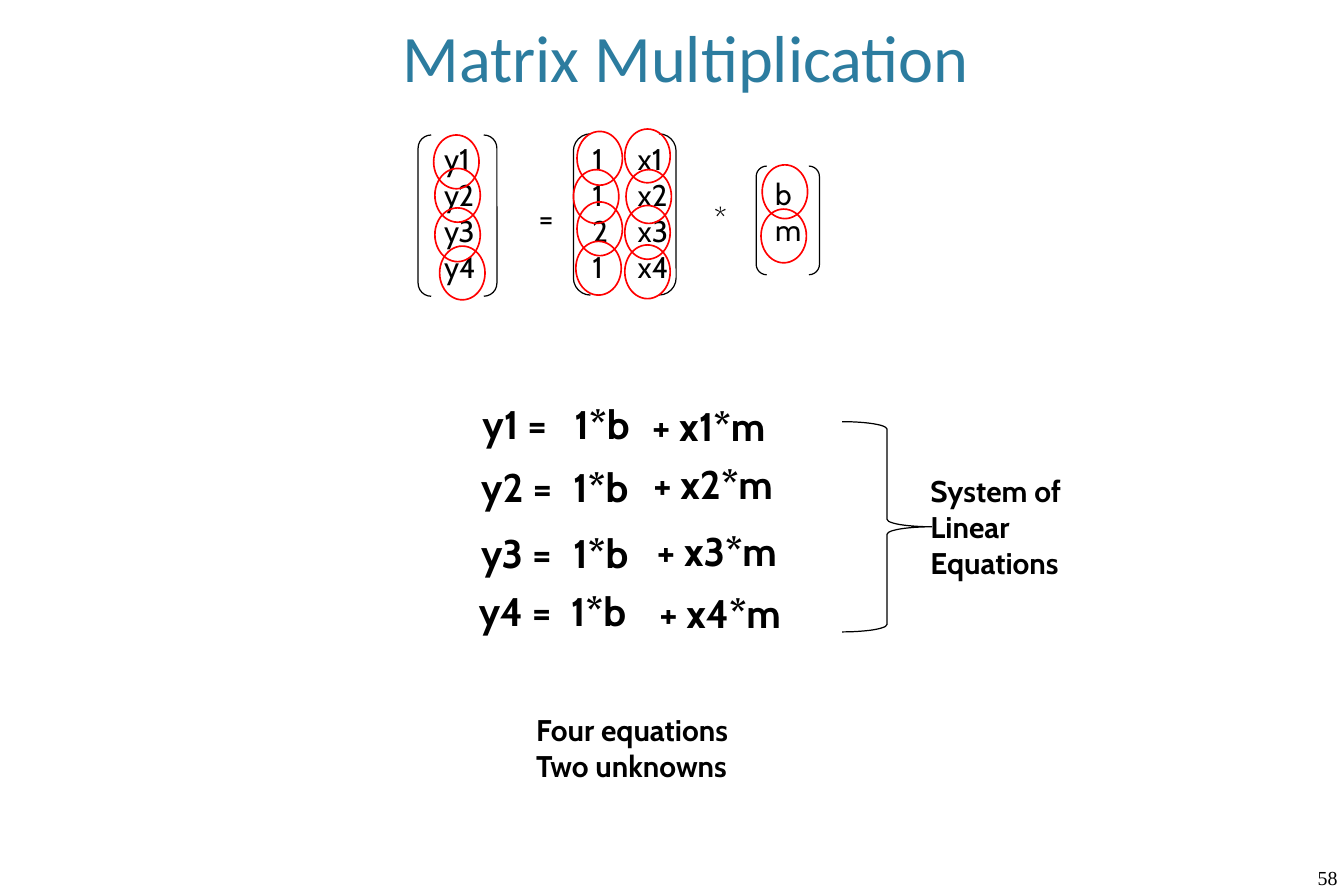
from pptx import Presentation
from pptx import util as u
from pptx.dml.color import RGBColor
from pptx.enum import shapes, text

PX = u.Inches(1) // 100
BLACK = RGBColor(0x00, 0x00, 0x00)
RED = RGBColor(0xFF, 0x00, 0x00)
TEAL = RGBColor(0x2C, 0x7C, 0x9F)
SHAPE = shapes.MSO_SHAPE
TITLE_ONLY = 5

BRACKETS = [(350, 113, 66, 135), (480, 112, 86, 135), (633, 139, 53, 91)]
CIRCLES = {
    "y": [(363, 113), (364, 141), (364, 174), (368, 206)],
    "ones": [(483, 110), (480, 142), (483, 169), (482, 202)],
    "x": [(523, 108), (524, 142), (523, 172), (523, 205)],
    "unknowns": [(638, 138), (637, 175)],
}
# Corner of "y =" and corner of "+ x*m" in each equation
EQUATIONS = [
    ((394, 330), (536, 331)),
    ((393, 382), (537, 380)),
    ((393, 438), (540, 436)),
    ((391, 486), (542, 488)),
]


def write(frame, content, size=18, font="Cabin", color=BLACK, bold=False,
          align=text.PP_ALIGN.LEFT, hanging=0):
    """Fill a text frame, one paragraph per line of content."""
    frame.text = content
    for para in frame.paragraphs:
        para.alignment = align
        if hanging:
            properties = para._p.get_or_add_pPr()
            properties.set("marL", str(hanging * PX))
            properties.set("indent", str(-hanging * PX))
        for span in para.runs:
            span.font.size = u.Pt(size)
            span.font.name = font
            span.font.bold = bold
            span.font.color.rgb = color


class SlideBuilder:
    def __init__(self, deck):
        self.page = deck.slides.add_slide(deck.slide_layouts[TITLE_ONLY])

    def title(self, content, left, top, width, height):
        box = self.page.shapes.title
        box.left, box.top = left * PX, top * PX
        box.width, box.height = width * PX, height * PX
        frame = box.text_frame
        frame.word_wrap = False
        frame.vertical_anchor = text.MSO_ANCHOR.MIDDLE
        write(frame, content, size=40, font="Calibri", color=TEAL,
              align=text.PP_ALIGN.CENTER)

    def label(self, content, left, top, width, height, inset=(10, 5), **style):
        box = self.page.shapes.add_textbox(
            left * PX, top * PX, width * PX, height * PX)
        frame = box.text_frame
        frame.word_wrap = True
        frame.margin_left = frame.margin_right = inset[0] * PX
        frame.margin_top = frame.margin_bottom = inset[1] * PX
        write(frame, content, **style)

    def outline(self, kind, left, top, width, height, color=BLACK, weight=0.75):
        shape = self.page.shapes.add_shape(
            kind, left * PX, top * PX, width * PX, height * PX)
        shape.shadow.inherit = False
        shape.fill.background()
        shape.line.color.rgb = color
        shape.line.width = u.Pt(weight)


def main():
    deck = Presentation()
    deck.slide_width, deck.slide_height = 1125 * PX, 750 * PX
    slide = SlideBuilder(deck)

    slide.title("Matrix Multiplication", 289, 8, 570, 77)
    slide.label("58", 1103, 725, 22, 20, inset=(0, 0),
                size=12, font="Times New Roman")

    slide.label("y1\ny2\ny3\ny4", 362, 113, 123, 131)
    slide.label("=", 441, 162, 80, 40)
    slide.label("1\tx1\n1\tx2\n2\tx3\n1\tx4", 486, 113, 175, 131, hanging=38)
    slide.label("*", 588, 162, 48, 40)
    slide.label("b\nm", 639, 142, 54, 71)
    for bracket in BRACKETS:
        slide.outline(SHAPE.DOUBLE_BRACKET, *bracket)
    for column in CIRCLES.values():
        for left, top in column:
            slide.outline(SHAPE.OVAL, left, top, 38, 45, color=RED, weight=1)

    for row, ((left, top), slope_corner) in enumerate(EQUATIONS, start=1):
        slide.label(f"y{row} =", left, top, 86, 50, size=24, bold=True)
        slide.label("1*b", left + 77, top, 80, 50, size=24, bold=True)
        slide.label(f"+ x{row}*m", *slope_corner, 229, 50, size=24, bold=True)

    slide.outline(SHAPE.RIGHT_BRACE, 705, 353, 75, 176)
    slide.label("System of Linear Equations", 769, 391, 145, 101, bold=True)
    slide.label("Four equations\nTwo unknowns", 439, 591, 252, 71, bold=True)

    deck.save("out.pptx")


if __name__ == "__main__":
    main()
